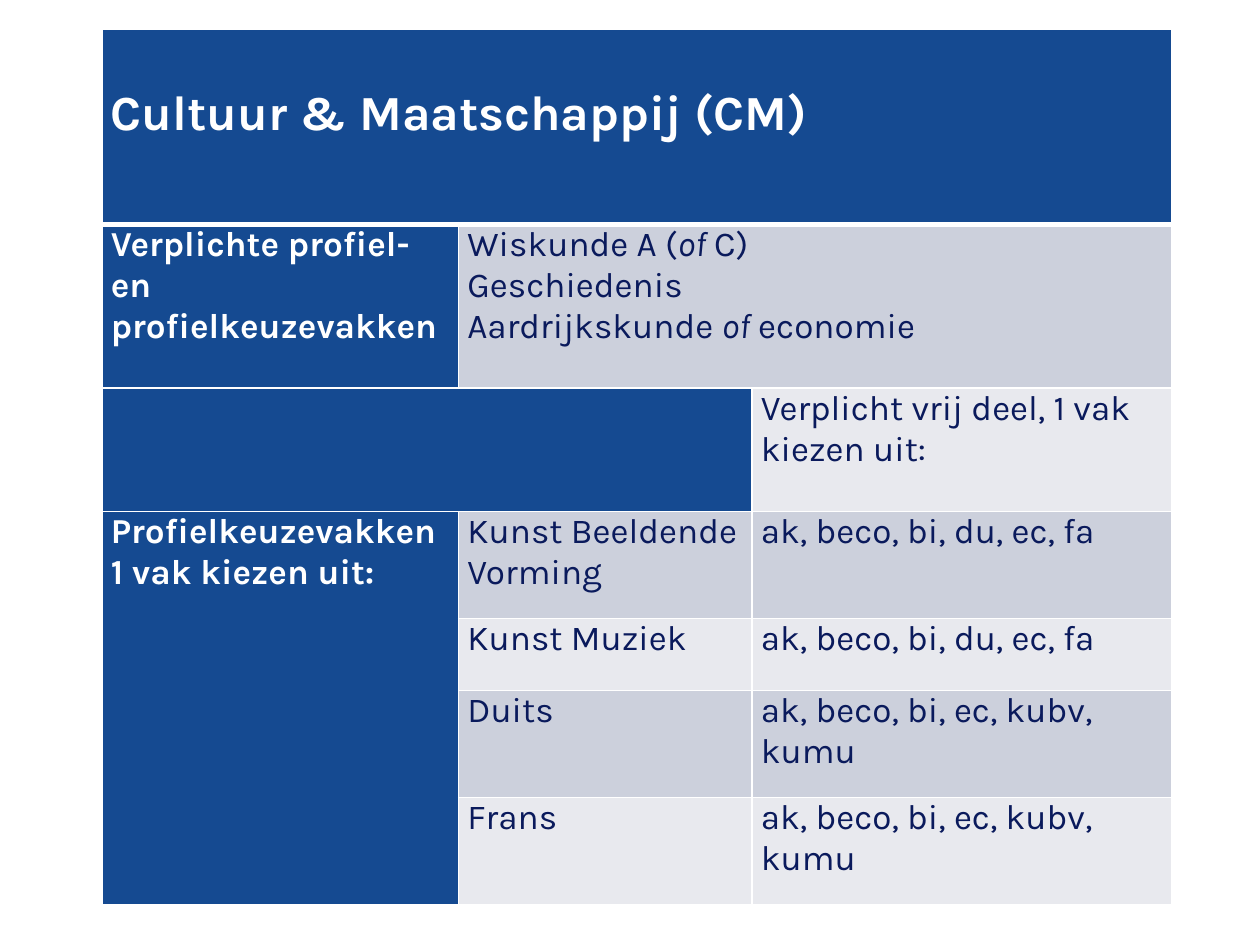
from dataclasses import dataclass
from lxml.etree import SubElement
from pptx import Presentation
from pptx.dml.color import RGBColor
from pptx.oxml.ns import qn
from pptx.util import Inches, Pt


@dataclass(frozen=True)
class Theme:
    font: str = "Karla"
    blue: str = "154A91"
    dark: str = "CCD0DC"
    light: str = "E8E9EE"
    navy: str = "0A1A5C"
    white: str = "FFFFFF"
    title: int = 28
    body: int = 20
    thin: int = 1
    thick: int = 3


THEME = Theme()
SIZE = (10, 7.5)
LEFT, TOP = 0.81, 0.23
COLS = [2.83, 2.33, 3.33]
ROWS = [1.55, 1.3, 0.98, 0.85, 0.57, 0.85, 0.85]
PAD = 0.07
DROP = 0.45

GRID = [
    ["Cultuur & Maatschappij (CM)", "", ""],
    [
        "Verplichte profiel- en profielkeuzevakken",
        "Wiskunde A (*of* C)\nGeschiedenis\nAardrijkskunde *of* economie",
        "",
    ],
    ["", "", "Verplicht vrij deel, 1 vak kiezen uit:"],
    ["Profielkeuzevakken 1 vak kiezen uit:", "Kunst Beeldende Vorming", "ak, beco, bi, du, ec, fa"],
    ["", "Kunst Muziek", "ak, beco, bi, du, ec, fa"],
    ["", "Duits", "ak, beco, bi, ec, kubv, kumu"],
    ["", "Frans", "ak, beco, bi, ec, kubv, kumu"],
]
SPANS = [((0, 0), (0, 2)), ((1, 1), (1, 2)), ((2, 0), (2, 1)), ((3, 0), (6, 0))]
HEADS = {(0, 0), (0, 1), (0, 2), (2, 1)}


def add_edge(cell, tag, width):
    line = SubElement(cell._tc.get_or_add_tcPr(), qn(f"a:{tag}"), w=str(Pt(width)))
    fill = SubElement(line, qn("a:solidFill"))
    SubElement(fill, qn("a:srgbClr"), val=THEME.white)


def write(cell, text, size, color, bold):
    frame = cell.text_frame
    for i, row in enumerate(text.split("\n")):
        para = frame.add_paragraph() if i else frame.paragraphs[0]
        for j, part in enumerate(row.split("*")):
            run = para.add_run()
            run.text = part
            if j % 2:
                run.font.italic = True
        font = para.font
        font.name, font.size, font.bold = THEME.font, Pt(size), bold
        font.color.rgb = RGBColor.from_string(color)


def style(cell, row, col):
    head = col == 0 or (row, col) in HEADS
    cell.margin_left = cell.margin_right = Inches(PAD)
    cell.margin_top = Inches(0 if row else DROP)
    cell.margin_bottom = 0
    above = THEME.thick if row == 1 else THEME.thin
    below = THEME.thin if row else THEME.thick
    for tag, width in zip(("lnL", "lnR", "lnT", "lnB"), (THEME.thin, THEME.thin, above, below)):
        add_edge(cell, tag, width)
    band = THEME.dark if row % 2 else THEME.light
    cell.fill.solid()
    cell.fill.fore_color.rgb = RGBColor.from_string(THEME.blue if head else band)
    if GRID[row][col]:
        size = THEME.body if row else THEME.title
        write(cell, GRID[row][col], size, THEME.white if head else THEME.navy, head)


def main():
    deck = Presentation()
    deck.slide_width, deck.slide_height = map(Inches, SIZE)
    slide = deck.slides.add_slide(deck.slide_layouts[6])
    box = (LEFT, TOP, sum(COLS), sum(ROWS))
    table = slide.shapes.add_table(len(ROWS), len(COLS), *map(Inches, box)).table
    table.first_row = table.horz_banding = False
    for col, width in zip(table.columns, COLS):
        col.width = Inches(width)
    for row, height in zip(table.rows, ROWS):
        row.height = Inches(height)
    for start, end in SPANS:
        table.cell(*start).merge(table.cell(*end))
    for row in range(len(ROWS)):
        for col in range(len(COLS)):
            style(table.cell(row, col), row, col)
    deck.save("out.pptx")


if __name__ == "__main__":
    main()
